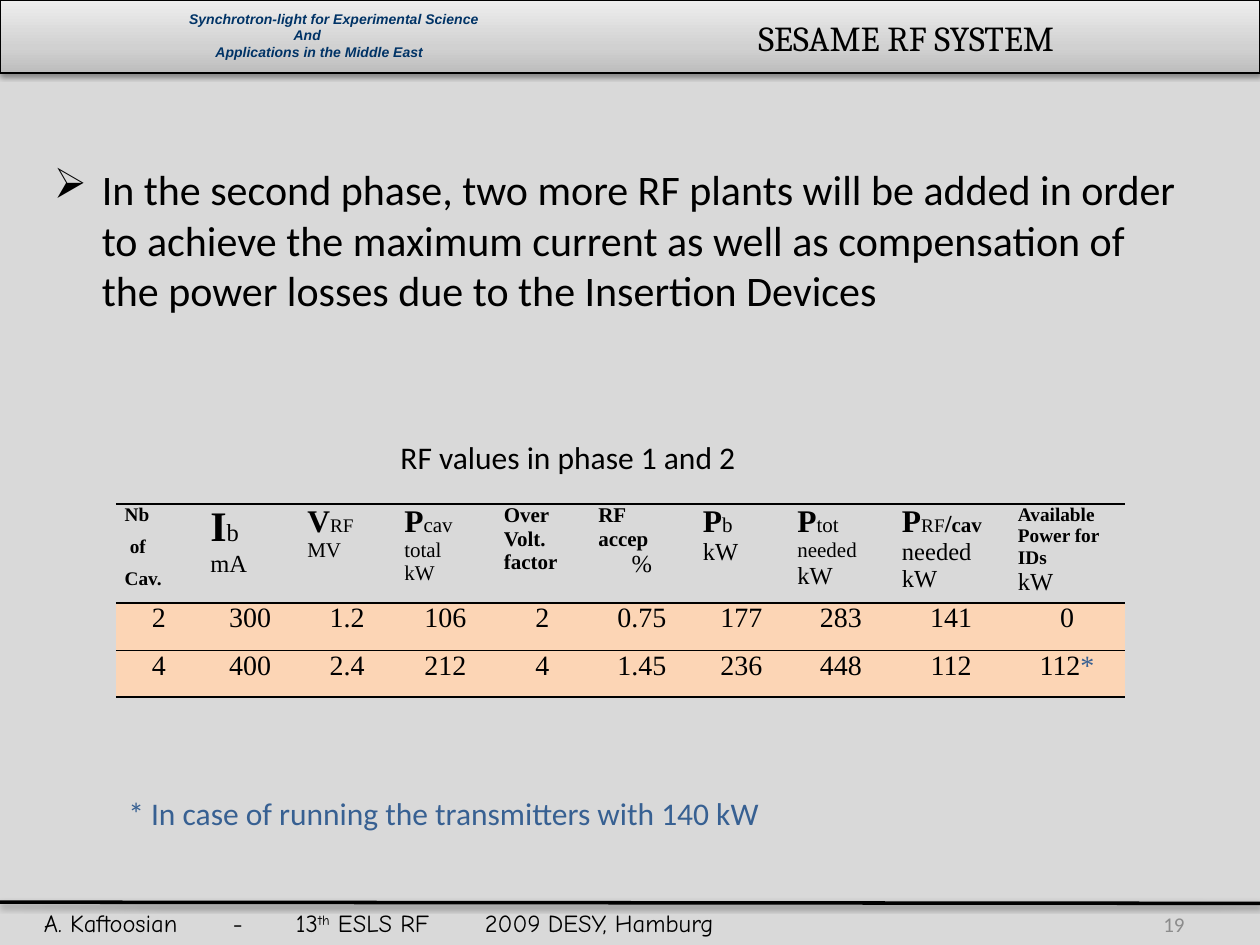
from copy import deepcopy
from dataclasses import dataclass

from lxml import etree
from pptx import Presentation
from pptx.dml.color import RGBColor as RGB
from pptx.enum.shapes import MSO_CONNECTOR as CONNECTOR, MSO_SHAPE as SHAPE
from pptx.enum.text import MSO_ANCHOR as ANCHOR, PP_ALIGN as ALIGN
from pptx.oxml import parse_xml
from pptx.oxml.ns import nsdecls, qn
from pptx.util import Inches, Pt


@dataclass(frozen=True)
class Theme:
    ink: str = "000000"
    paper: str = "D9D9D9"
    navy: str = "003366"
    note: str = "376092"
    muted: str = "8C8C8C"
    peach: str = "FCD5B5"
    bar: tuple = ((0, "BDBDBD"), (0.35, "D1D1D1"), (1, "EEEEEE"))
    body: str = "Calibri"
    serif: str = "Times New Roman"
    tiny: int = 8
    label: int = 11
    small: int = 12
    unit: int = 14
    value: int = 16
    caption: int = 18
    title: int = 20
    large: int = 24


T = Theme()


def write(frame, *runs, size=T.caption, font=T.body, color=T.ink, bold=False, italic=False,
          align=ALIGN.LEFT, indent=0, hang=0, after=0, bullet=None, tabs=()):
    """Add one paragraph; a run is a string or (string, {size, bold, color, baseline})."""
    paragraph = frame.add_paragraph() if frame.text else frame.paragraphs[0]
    paragraph.alignment = align
    paragraph.space_before, paragraph.space_after = Pt(0), Pt(after)
    properties = paragraph._p.get_or_add_pPr()
    properties.set("marL", str(Inches(indent)))
    properties.set("indent", str(-Inches(hang)))
    if bullet:
        etree.SubElement(properties, qn("a:buChar"), char=bullet)
    if tabs:
        stops = etree.SubElement(properties, qn("a:tabLst"))
        for stop in tabs:
            etree.SubElement(stops, qn("a:tab"), pos=str(Inches(stop)), algn="l")
    for item in runs:
        text, own = (item, {}) if isinstance(item, str) else item
        run = paragraph.add_run()
        run.text = text
        run.font.name = font
        run.font.size = Pt(own.get("size", size))
        run.font.bold = own.get("bold", bold)
        run.font.italic = italic
        run.font.color.rgb = RGB.from_string(own.get("color", color))
        if "baseline" in own:
            run._r.get_or_add_rPr().set("baseline", str(own["baseline"]))


def add_frame(left, top, width, height, wrap=True, anchor=ANCHOR.TOP):
    frame = slide.shapes.add_textbox(*map(Inches, (left, top, width, height))).text_frame
    frame.word_wrap = wrap
    frame.vertical_anchor = anchor
    return frame


deck = Presentation()
deck.slide_width, deck.slide_height = Inches(10), Inches(7.5)
slide = deck.slides.add_slide(deck.slide_layouts[6])
slide.background.fill.solid()
slide.background.fill.fore_color.rgb = RGB.from_string(T.paper)

# Header bar and footer rule
header_bar = slide.shapes.add_shape(SHAPE.RECTANGLE, 0, 0, Inches(10), Inches(0.58))
header_bar.fill.gradient()
header_bar.fill.gradient_angle = 90
stop_list = header_bar._element.spPr.find(".//" + qn("a:gsLst"))
stop_list.append(deepcopy(stop_list[0]))
for stop, (position, color) in zip(header_bar.fill.gradient_stops, T.bar):
    stop.position = position
    stop.color.rgb = RGB.from_string(color)
footer_rule = slide.shapes.add_connector(
    CONNECTOR.STRAIGHT, 0, Inches(7.16), Inches(10), Inches(7.17))
for edge, weight in ((header_bar, 0.75), (footer_rule, 2)):
    edge.line.color.rgb = RGB.from_string(T.ink)
    edge.line.width = Pt(weight)
    edge._element.spPr.append(parse_xml(
        f'<a:effectLst {nsdecls("a")}>'
        f'<a:outerShdw blurRad="{Pt(3.1)}" dist="{Pt(1.6)}" dir="5400000" rotWithShape="0">'
        f'<a:srgbClr val="{T.ink}"><a:alpha val="38000"/></a:srgbClr>'
        '</a:outerShdw></a:effectLst>'))

# Header and footer wording
institute = add_frame(1.5, 0.08, 2.42, 0.4, anchor=ANCHOR.MIDDLE)
institute.margin_left = institute.margin_top = institute.margin_bottom = 0
institute.margin_right = Inches(-0.33)
for line, indent in (("Synchrotron-light for Experimental Science", 0), ("And", 0.83),
                     ("Applications in the Middle East", 0.21)):
    write(institute, line, size=T.tiny, font="Arial", color=T.navy,
          bold=True, italic=True, indent=indent)
write(add_frame(5.92, 0.08, 3, 0.44), "SESAME RF SYSTEM", size=T.title, font="Cambria")
write(add_frame(0.25, 7.16, 6.67, 0.34), "A. Kaftoosian\t-\t13", ("th", {"baseline": 30000}),
      " ESLS RF\t2009\tDESY, Hamburg", size=T.unit, font="Comic Neue",
      tabs=(1.2, 1.47, 2.78, 3.55))
write(add_frame(8.75, 7.17, 0.75, 0.33, anchor=ANCHOR.MIDDLE), "19",
      size=T.small, color=T.muted, align=ALIGN.RIGHT)

# Main statement
write(add_frame(0.33, 1.25, 9.17, 1.83),
      "In the second phase, two more RF plants will be added in order to achieve the maximum "
      "current as well as compensation of the power losses due to the Insertion Devices",
      size=T.large, indent=0.38, hang=0.38, bullet="➢")

# Table of RF values: each heading is a list of (runs, paragraph format)
symbol = {"size": T.caption, "bold": True}
strong = {"size": T.label, "bold": True}
small, unit = {"size": T.small}, {"size": T.unit}
headings = [
    [(["Nb"], strong | {"after": 6}), (["of"], strong | {"after": 6, "indent": 0.04}),
     (["Cav."], strong | {"after": 3})],
    [([("I", {"size": T.large, "bold": True}), "b"], unit), (["mA"], unit)],
    [([("V", symbol), ("RF", {"size": T.label})], small), (["MV"], small)],
    [([("P", symbol), "cav"], small), (["total"], small), (["kW"], small)],
    [([word], small | {"bold": True}) for word in ("Over", "Volt.", "factor")],
    [(["RF"], small | {"bold": True}), (["accep"], small | {"bold": True}),
     (["%"], unit | {"align": ALIGN.CENTER})],
    [([("P", symbol), "b"], small), (["kW"], unit)],
    [([("P", symbol), "tot"], small), (["needed"], small), (["kW"], unit)],
    [([("P", symbol), ("RF", {"size": T.label}), ("/", unit | {"bold": True}),
       ("cav", small | {"bold": True})], unit), (["needed"], unit), (["kW"], unit)],
    [(["Available Power for IDs"], strong), (["kW"], unit | {"after": 3})],
]
phases = [
    ["2", "300", "1.2", "106", "2", "0.75", "177", "283", "141", "0"],
    ["4", "400", "2.4", "212", "4", "1.45", "236", "448", "112", "112"],
]
value_format = {"size": T.value, "align": ALIGN.CENTER, "after": 3}
rows = [headings] + [[[([value], value_format)] for value in phase] for phase in phases]
rows[-1][-1][0][0].append(("*", {"color": T.note}))
column_widths = (0.68, 0.77, 0.77, 0.79, 0.75, 0.83, 0.75, 0.83, 0.92, 0.92)
row_heights = (0.75, 0.38, 0.37)
rule_weights = (1.5, 1.5, 1, 1.5)

rf_values = slide.shapes.add_table(
    len(rows), len(headings), Inches(0.92), Inches(4), Inches(8), Inches(1.5)).table
rf_values.first_row = rf_values.horz_banding = False
for column, width in zip(rf_values.columns, column_widths):
    column.width = Inches(width)
for r, (row, height) in enumerate(zip(rows, row_heights)):
    rf_values.rows[r].height = Inches(height)
    for c, content in enumerate(row):
        cell = rf_values.cell(r, c)
        cell.margin_left = cell.margin_right = Inches(0.07)
        cell.margin_top = cell.margin_bottom = 0
        for runs, fmt in content:
            write(cell.text_frame, *runs, font=T.serif, **fmt)
        borders = cell._tc.get_or_add_tcPr()
        for side in ("lnL", "lnR"):
            border = etree.SubElement(borders, qn(f"a:{side}"), w="0")
            etree.SubElement(border, qn("a:noFill"))
        for side, weight in zip(("lnT", "lnB"), rule_weights[r:]):
            border = etree.SubElement(borders, qn(f"a:{side}"), w=str(Pt(weight)))
            paint = etree.SubElement(border, qn("a:solidFill"))
            etree.SubElement(paint, qn("a:srgbClr"), val=T.ink)
        cell.fill.solid()
        cell.fill.fore_color.rgb = RGB.from_string(T.peach if r else T.paper)

# Footnote and table caption
write(add_frame(0.92, 6.25, 5.27, 0.4, wrap=False),
      "* In case of running the transmitters with 140 kW", color=T.note)
write(add_frame(3.08, 3.43, 2.89, 0.4, wrap=False), "RF values in phase 1 and 2")

deck.save("out.pptx")
